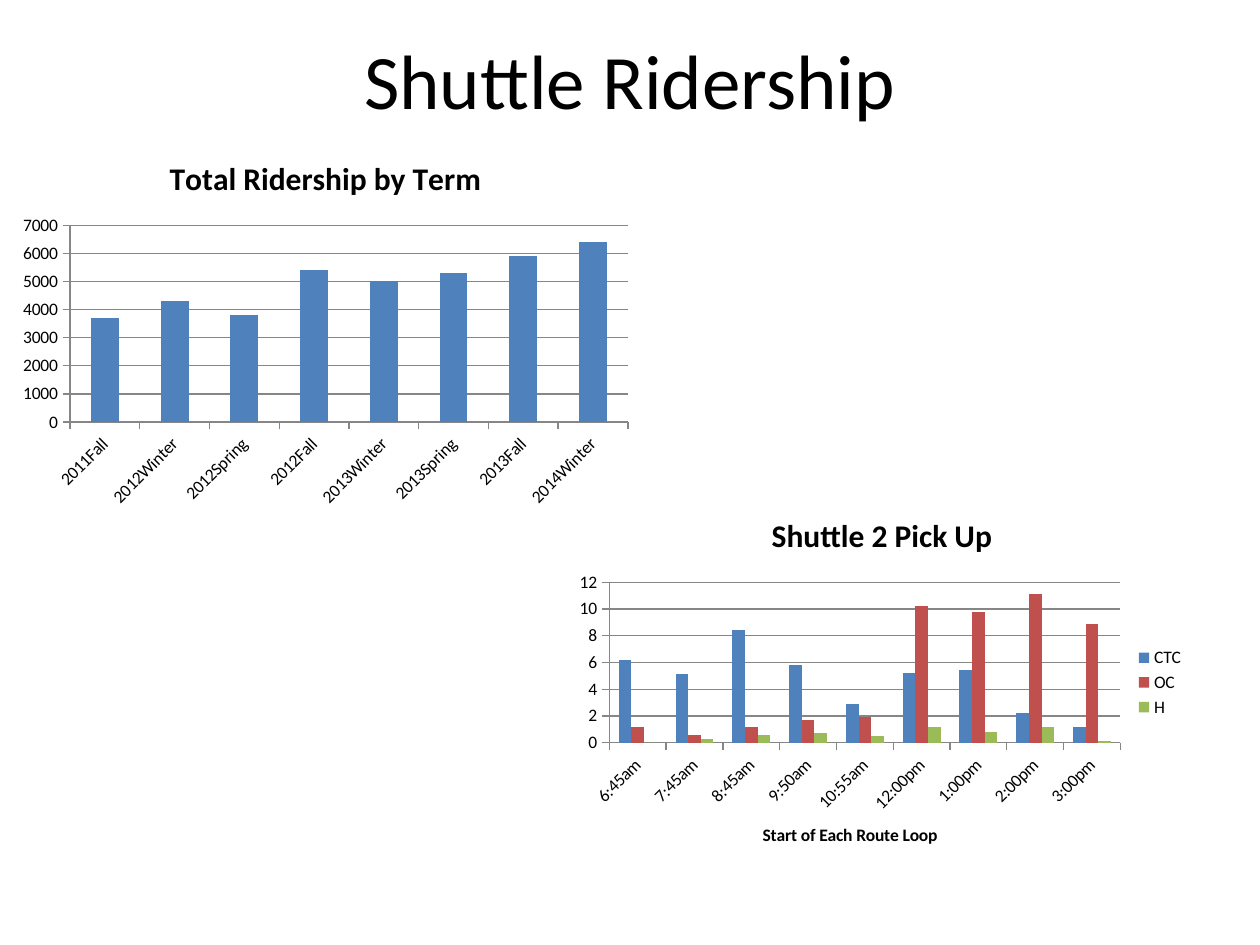
"""Build the shuttle ridership slide with its two column charts."""
from pptx import Presentation
from pptx import util as u
from pptx.chart.data import CategoryChartData
from pptx.dml.color import RGBColor
from pptx.enum import chart as ch, text
from pptx.oxml.ns import qn

FONT = "Calibri"
COLORS = {"text": "000000", "axis": "868686", "blue": "4F81BD", "red": "C0504D", "green": "9BBB59"}

TERMS = ["2011Fall", "2012Winter", "2012Spring", "2012Fall",
         "2013Winter", "2013Spring", "2013Fall", "2014Winter"]
RIDERSHIP = [("Series 1", "blue", [3700, 4300, 3800, 5400, 5000, 5300, 5900, 6400])]

LOOPS = ["6:45am", "7:45am", "8:45am", "9:50am", "10:55am",
         "12:00pm", "1:00pm", "2:00pm", "3:00pm"]
PICK_UPS = [
    ("CTC", "blue", [6.2, 5.1, 8.4, 5.8, 2.9, 5.2, 5.4, 2.2, 1.2]),
    ("OC", "red", [1.2, 0.6, 1.2, 1.7, 1.9, 10.2, 9.8, 11.1, 8.9]),
    ("H", "green", [0, 0.3, 0.6, 0.7, 0.5, 1.2, 0.8, 1.2, 0.1]),
]


def rgb(name):
    return RGBColor.from_string(COLORS[name])


def set_font(font, size, bold=False):
    font.name, font.size, font.bold = FONT, u.Pt(size), bold
    font.color.rgb = rgb("text")


def add_title(s, words):
    tf = s.shapes.add_textbox(u.Pt(36), u.Pt(0), u.Pt(648), u.Pt(90)).text_frame
    tf.word_wrap = True
    tf.vertical_anchor = text.MSO_ANCHOR.MIDDLE
    p = tf.paragraphs[0]
    p.text = words
    p.alignment = text.PP_ALIGN.CENTER
    set_font(p.font, 44)


def set_heading(owner, words, size):
    p = owner.text_frame.paragraphs[0]
    p.text = words
    set_font(p.font, size, bold=True)


def style_axis(axis, maximum=None, step=None):
    axis.major_tick_mark = ch.XL_TICK_MARK.OUTSIDE
    axis.minor_tick_mark = ch.XL_TICK_MARK.NONE
    axis.format.line.color.rgb = rgb("axis")
    set_font(axis.tick_labels.font, 10)
    axis.has_major_gridlines = maximum is not None
    if maximum is None:
        axis._element.find(qn("c:txPr")).find(qn("a:bodyPr")).set("rot", "-2700000")
    else:
        axis.minimum_scale, axis.maximum_scale, axis.major_unit = 0, maximum, step
        axis.major_gridlines.format.line.color.rgb = rgb("axis")
        axis.tick_labels.number_format = "0"
        axis.tick_labels.number_format_is_linked = False


def add_columns(s, left, top, title, categories, series, maximum, step):
    data = CategoryChartData()
    data.categories = categories
    for name, _, values in series:
        data.add_series(name, values)
    chart = s.shapes.add_chart(ch.XL_CHART_TYPE.COLUMN_CLUSTERED, u.Pt(left), u.Pt(top),
                               u.Pt(360), u.Pt(216), data).chart
    set_font(chart.font, 10)
    chart.has_title = True
    set_heading(chart.chart_title, title, 18)
    chart.chart_title.include_in_layout = False
    chart.has_legend = len(series) > 1
    if chart.has_legend:
        chart.legend.position = ch.XL_LEGEND_POSITION.RIGHT
        chart.legend.include_in_layout = False
        set_font(chart.legend.font, 10)
    style_axis(chart.category_axis)
    style_axis(chart.value_axis, maximum, step)
    plot = chart.plots[0]
    plot.vary_by_categories = False
    plot.gap_width, plot.overlap = 150, 0
    for bars, (_, color, _) in zip(plot.series, series):
        bars.format.fill.solid()
        bars.format.fill.fore_color.rgb = rgb(color)
    return chart


def main():
    prs = Presentation()
    prs.slide_width, prs.slide_height = u.Pt(720), u.Pt(540)
    s = prs.slides.add_slide(prs.slide_layouts[6])
    add_title(s, "Shuttle Ridership")
    add_columns(s, 6, 78, "Total Ridership by Term", TERMS, RIDERSHIP, 7000, 1000)
    pick_up = add_columns(s, 324, 282, "Shuttle 2 Pick Up", LOOPS, PICK_UPS, 12, 2)
    set_heading(pick_up.category_axis.axis_title, "Start of Each Route Loop", 10)
    prs.save("out.pptx")


if __name__ == "__main__":
    main()
